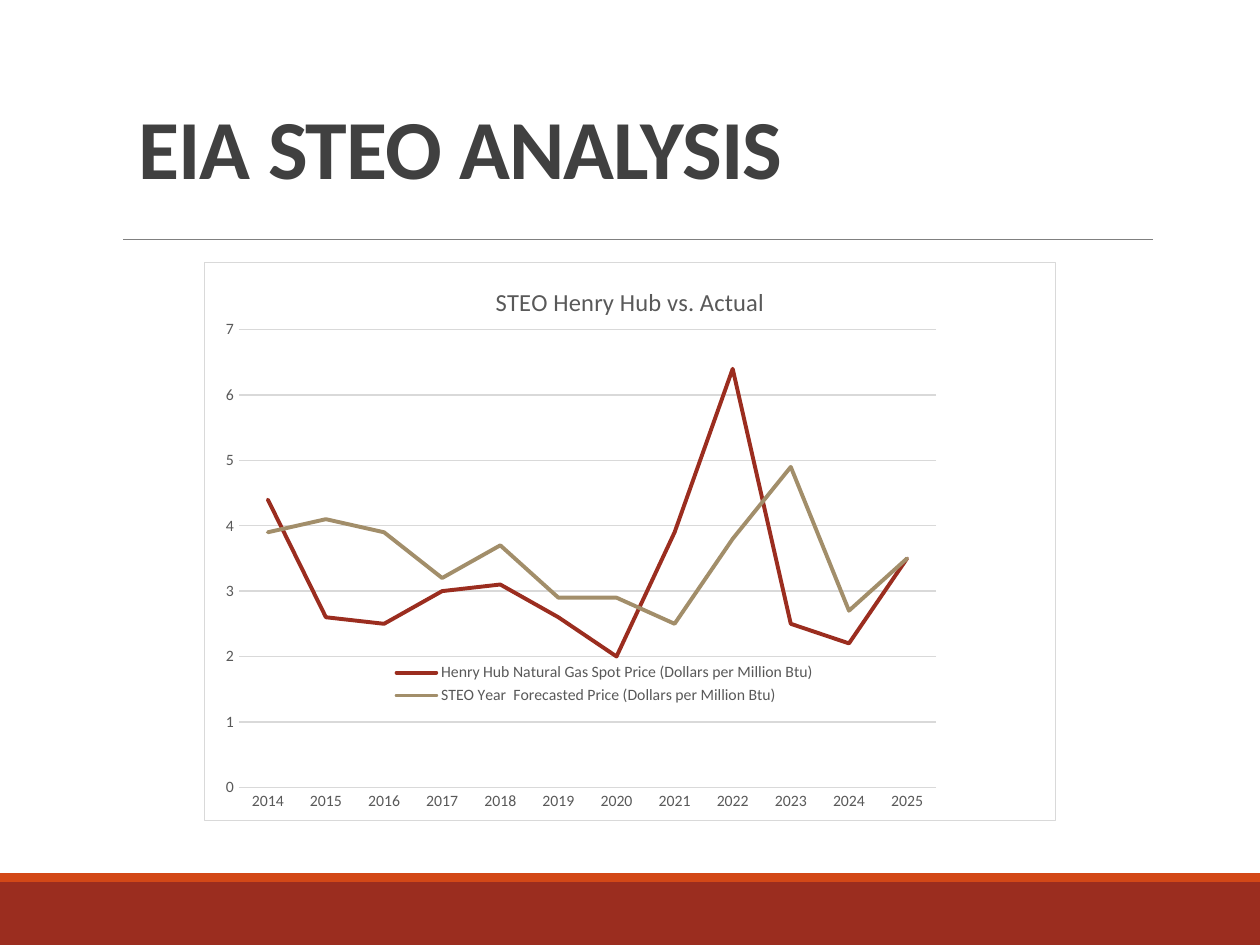
import pptx
import pptx.chart.data
import pptx.dml.color
import pptx.enum.chart
import pptx.enum.shapes
import pptx.enum.text
import pptx.oxml
import pptx.oxml.ns
import pptx.util

RGB = pptx.dml.color.RGBColor
Inches, Pt = pptx.util.Inches, pptx.util.Pt
qn = pptx.oxml.ns.qn
XL = pptx.enum.chart

# Content
TITLE = "EIA STEO ANALYSIS"
HEAD = "STEO Henry Hub vs. Actual"
YEARS = [str(year) for year in range(2014, 2026)]
RED, ORANGE, TAN = RGB(0x9B, 0x2D, 0x1F), RGB(0xD3, 0x48, 0x17), RGB(0xA2, 0x8E, 0x6A)
DARK, TEXT = RGB(0x40, 0x40, 0x40), RGB(0x59, 0x59, 0x59)
RULE, GRID = RGB(0x80, 0x80, 0x80), RGB(0xD9, 0xD9, 0xD9)
SERIES = [
    ("Henry Hub Natural Gas Spot Price (Dollars per Million Btu)", RED,
     [4.4, 2.6, 2.5, 3, 3.1, 2.6, 2, 3.9, 6.4, 2.5, 2.2, 3.5]),
    ("STEO Year  Forecasted Price (Dollars per Million Btu)", TAN,
     [3.9, 4.1, 3.9, 3.2, 3.7, 2.9, 2.9, 2.5, 3.8, 4.9, 2.7, 3.5]),
]
FONT = "Calibri"
WIDE, HIGH = 10, 7.5
BANDS = [(7, 0.5, RED), (6.93, 0.07, ORANGE)]  # top, height, fill
PLOT = (0.04, 0.12, 0.82, 0.82)  # shares of the chart
KEY = (0.21, 0.71, 0.52, 0.09)


def style(font, size, color, bold=False):
    font.name, font.size, font.bold = FONT, Pt(size), bold
    font.color.rgb = color


def layout(box, inner=False):
    target = '<c:layoutTarget val="inner"/>' if inner else ""
    modes = "".join(f'<c:{s}Mode val="edge"/>' for s in "xy")
    sizes = "".join(f'<c:{s} val="{v}"/>' for s, v in zip("xywh", box))
    return pptx.oxml.parse_xml(
        f'<c:layout {pptx.oxml.ns.nsdecls("c")}><c:manualLayout>'
        f"{target}{modes}{sizes}</c:manualLayout></c:layout>")


def clear(part):
    for old in part.findall(qn("c:layout")):
        part.remove(old)


prs = pptx.Presentation()
prs.slide_width, prs.slide_height = Inches(WIDE), Inches(HIGH)
slide = prs.slides.add_slide(prs.slide_layouts[6])
shapes = slide.shapes

# Footer bands
for top, height, fill in BANDS:
    band = shapes.add_shape(pptx.enum.shapes.MSO_SHAPE.RECTANGLE, 0,
                            Inches(top), Inches(WIDE), Inches(height))
    band.shadow.inherit = False
    band.fill.solid()
    band.fill.fore_color.rgb = fill
    band.line.fill.background()

# Rule under the title
rule = shapes.add_connector(pptx.enum.shapes.MSO_CONNECTOR.STRAIGHT,
                            Inches(0.98), Inches(1.9), Inches(9.15), Inches(1.9))
rule.line.color.rgb, rule.line.width = RULE, Pt(0.5)
pptx.oxml.ns.qn
rule._element.spPr.append(pptx.oxml.parse_xml(
    f'<a:effectLst {pptx.oxml.ns.nsdecls("a")}/>'))

# Title
box = shapes.add_textbox(Inches(1), Inches(0.67), Inches(8.17), Inches(0.94))
frame = box.text_frame
frame.word_wrap = True
frame.vertical_anchor = pptx.enum.text.MSO_ANCHOR.BOTTOM
para = frame.paragraphs[0]
para.line_spacing = 0.85
run = para.add_run()
run.text = TITLE
style(para.font, 48, DARK, True)
run._r.get_or_add_rPr().set("spc", "-50")

# Chart
data = pptx.chart.data.CategoryChartData()
data.categories = YEARS
for name, _, vals in SERIES:
    data.add_series(name, vals)
chart = shapes.add_chart(XL.XL_CHART_TYPE.LINE, Inches(1.62), Inches(2.08),
                         Inches(6.76), Inches(4.44), data).chart
style(chart.font, 10, TEXT)
chart.has_title = True
chart.chart_title.include_in_layout = False
head = chart.chart_title.text_frame
head.text = HEAD
style(head.paragraphs[0].font, 14, TEXT)
chart.plots[0].vary_by_categories = False
for line, (_, color, _) in zip(chart.plots[0].series, SERIES):
    line.smooth = False
    line.marker.style = XL.XL_MARKER_STYLE.NONE
    line.format.line.color.rgb, line.format.line.width = color, Pt(2.25)
    line.format.line._ln.set("cap", "rnd")

# Axes
years, price = chart.category_axis, chart.value_axis
for axis in (years, price):
    axis.major_tick_mark = axis.minor_tick_mark = XL.XL_TICK_MARK.NONE
    style(axis.tick_labels.font, 9, TEXT)
price.minimum_scale, price.maximum_scale, price.major_unit = 0, 7, 1
price.tick_labels.number_format = "General"
price.tick_labels.number_format_is_linked = False
price.has_major_gridlines = True
price.format.line.fill.background()
for edge in (years.format.line, price.major_gridlines.format.line):
    edge.color.rgb, edge.width = GRID, Pt(0.75)

# Legend inside the plot
chart.has_legend = True
key = chart.legend
key.position = XL.XL_LEGEND_POSITION.RIGHT
key.include_in_layout = True
style(key.font, 9, TEXT)
clear(key._element)
key._element.find(qn("c:legendPos")).addnext(layout(KEY))

# Plot area and frame
area = chart._chartSpace.chart.plotArea
clear(area)
area.insert(0, layout(PLOT, True))
chart._chartSpace.chart.addnext(pptx.oxml.parse_xml(
    f'<c:spPr {pptx.oxml.ns.nsdecls("c", "a")}>'
    '<a:solidFill><a:srgbClr val="FFFFFF"/></a:solidFill>'
    f'<a:ln w="{Pt(0.75)}"><a:solidFill><a:srgbClr val="{GRID}"/></a:solidFill></a:ln>'
    "</c:spPr>"))

prs.save("out.pptx")
